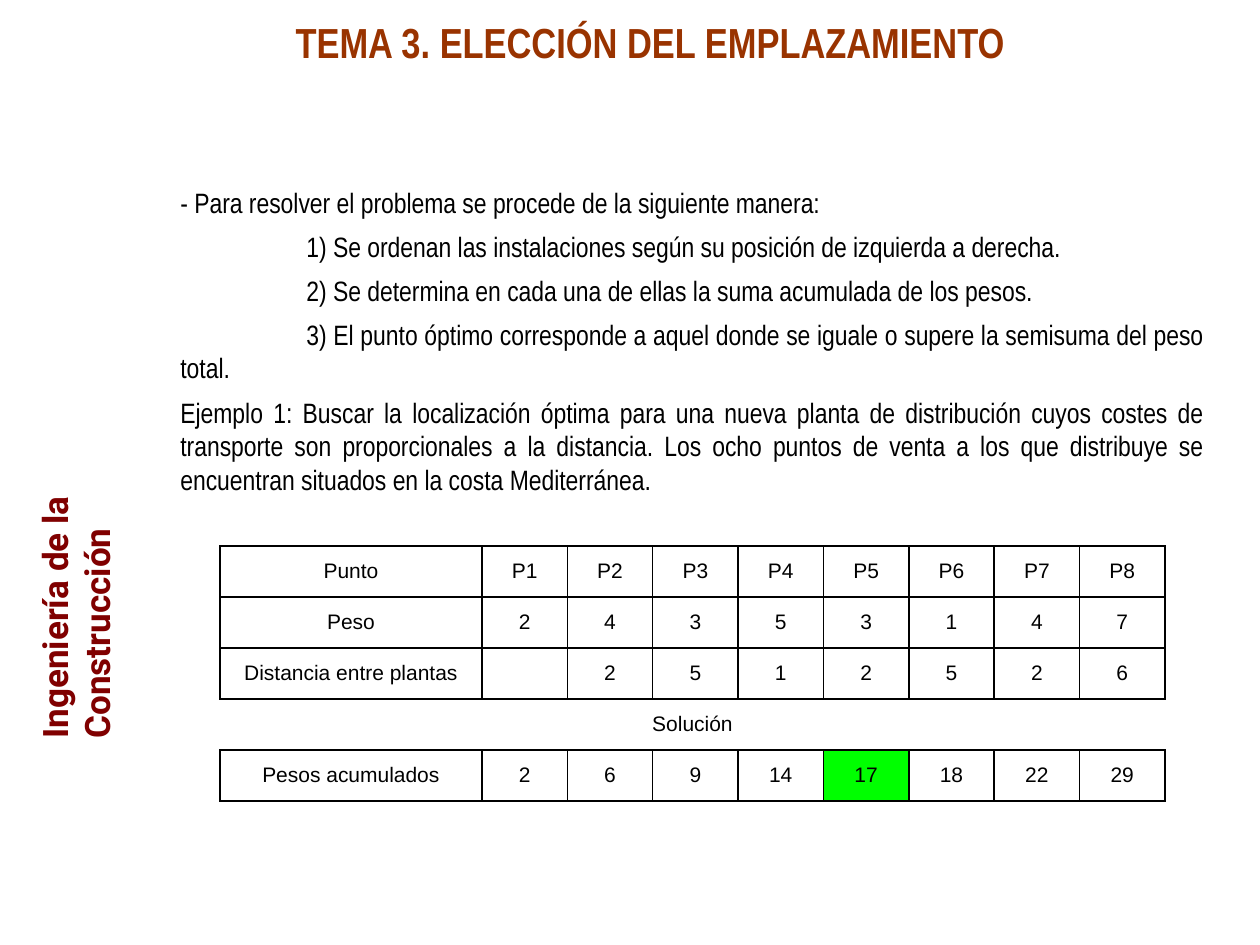
from lxml.etree import SubElement
from pptx import Presentation
from pptx.dml.color import RGBColor
from pptx.enum.text import MSO_ANCHOR as Anchor, MSO_AUTO_SIZE as AutoSize, PP_ALIGN as Align
from pptx.oxml.ns import qn
from pptx.util import Emu, Pt

PX = 914400 // 126
STEPS = [
    "1) Se ordenan las instalaciones según su posición de izquierda a derecha.",
    "2) Se determina en cada una de ellas la suma acumulada de los pesos.",
    "3) El punto óptimo corresponde a aquel donde se iguale o supere la semisuma del peso total.",
]
INTRO = "- Para resolver el problema se procede de la siguiente manera:"
EXAMPLE = (
    "Ejemplo 1: Buscar la localización óptima para una nueva planta de distribución "
    "cuyos costes de transporte son proporcionales a la distancia. Los ocho puntos de "
    "venta a los que distribuye se encuentran situados en la costa Mediterránea."
)
ROWS = [
    ["Punto", "P1", "P2", "P3", "P4", "P5", "P6", "P7", "P8"],
    ["Peso", "2", "4", "3", "5", "3", "1", "4", "7"],
    ["Distancia entre plantas", "", "2", "5", "1", "2", "5", "2", "6"],
    ["Solución"],
    ["Pesos acumulados", "2", "6", "9", "14", "17", "18", "22", "29"],
]
SOLUTION_ROW = 3
OPTIMUM = (4, 5)


def px(*lengths):
    """Turn pixel lengths into EMU."""
    return [Emu(round(n * PX)) for n in lengths]


def rgb(color):
    """Return the colour for a hex string."""
    return RGBColor.from_string(color)


def style(p, font, size, color, bold=False):
    """Set the font of a whole paragraph."""
    p.font.name, p.font.size, p.font.bold = font, Pt(size), bold
    p.font.color.rgb = rgb(color)


def add_title(s, box):
    """Place the slide title."""
    sp = s.shapes.title
    sp.left, sp.top, sp.width, sp.height = px(*box)
    tf = sp.text_frame
    tf.text = "TEMA 3. ELECCIÓN DEL EMPLAZAMIENTO"
    tf.word_wrap, tf.auto_size, tf.vertical_anchor = True, AutoSize.NONE, Anchor.TOP
    p = tf.paragraphs[0]
    p.alignment = Align.LEFT
    style(p, "Arial Narrow", 24, "993300", True)


def add_subject(s, box):
    """Place the subject name, reading upwards."""
    sp = s.shapes.add_textbox(*px(*box))
    sp.rotation = 270
    tf = sp.text_frame
    tf.word_wrap = True
    tf.text = "Ingeniería de la Construcción"
    style(tf.paragraphs[0], "Roboto", 20, "800000", True)


def add_method(s, box):
    """Place the method, its indented steps and the example."""
    tf = s.shapes.add_textbox(*px(*box)).text_frame
    tf.word_wrap = True
    for i, text in enumerate([INTRO, *STEPS, EXAMPLE]):
        p = tf.add_paragraph() if i else tf.paragraphs[0]
        p.text = text
        p.alignment = Align.JUSTIFY
        p.space_before, p.space_after = Pt(3 if i else 0), Pt(3)
        if text in STEPS:
            pPr = p._p.get_or_add_pPr()
            pPr.set("marL", "0")
            pPr.set("indent", str(px(126)[0]))
        style(p, "Arial Narrow", 16, "000000")


def set_borders(cell, sides):
    """Draw the given sides of a cell in black and hide the others."""
    tcPr = cell._tc.get_or_add_tcPr()
    for side in "LRTB":
        ln = SubElement(tcPr, qn(f"a:ln{side}"), w=str(Pt(1)))
        if side in sides:
            fill = SubElement(ln, qn("a:solidFill"))
            SubElement(fill, qn("a:srgbClr"), val="000000")
        else:
            SubElement(ln, qn("a:noFill"))


def add_weights(s, box, label_width):
    """Place the table of points, weights and accumulated weights."""
    width, height = box[2:]
    cols = len(ROWS[0])
    table = s.shapes.add_table(len(ROWS), cols, *px(*box)).table
    table.first_row = table.horz_banding = False
    for i, col in enumerate(table.columns):
        col.width = px((width - label_width) / (cols - 1) if i else label_width)[0]
    for r, row in enumerate(table.rows):
        row.height = px(height / len(ROWS))[0]
        for c, cell in enumerate(row.cells):
            set_borders(cell, "TB" if r == SOLUTION_ROW else "LRTB")
            if (r, c) == OPTIMUM:
                cell.fill.solid()
                cell.fill.fore_color.rgb = rgb("00FF00")
            else:
                cell.fill.background()
            cell.vertical_anchor = Anchor.MIDDLE
            cell.text = ROWS[r][c] if c < len(ROWS[r]) else ""
            p = cell.text_frame.paragraphs[0]
            p.alignment = Align.CENTER
            style(p, "Arial", 12, "000000")
    table.cell(SOLUTION_ROW, 0).merge(table.cell(SOLUTION_ROW, cols - 1))


def main():
    """Build and save the slide."""
    prs = Presentation()
    prs.slide_width, prs.slide_height = px(1260, 945)
    s = prs.slides.add_slide(prs.slide_layouts[5])
    add_subject(s, (-169, 500, 447, 55))
    add_title(s, (283, 10, 742, 63))
    add_method(s, (168, 179, 1049, 326))
    add_weights(s, (220, 546, 945, 255), 262)
    prs.save("out.pptx")


if __name__ == "__main__":
    main()
